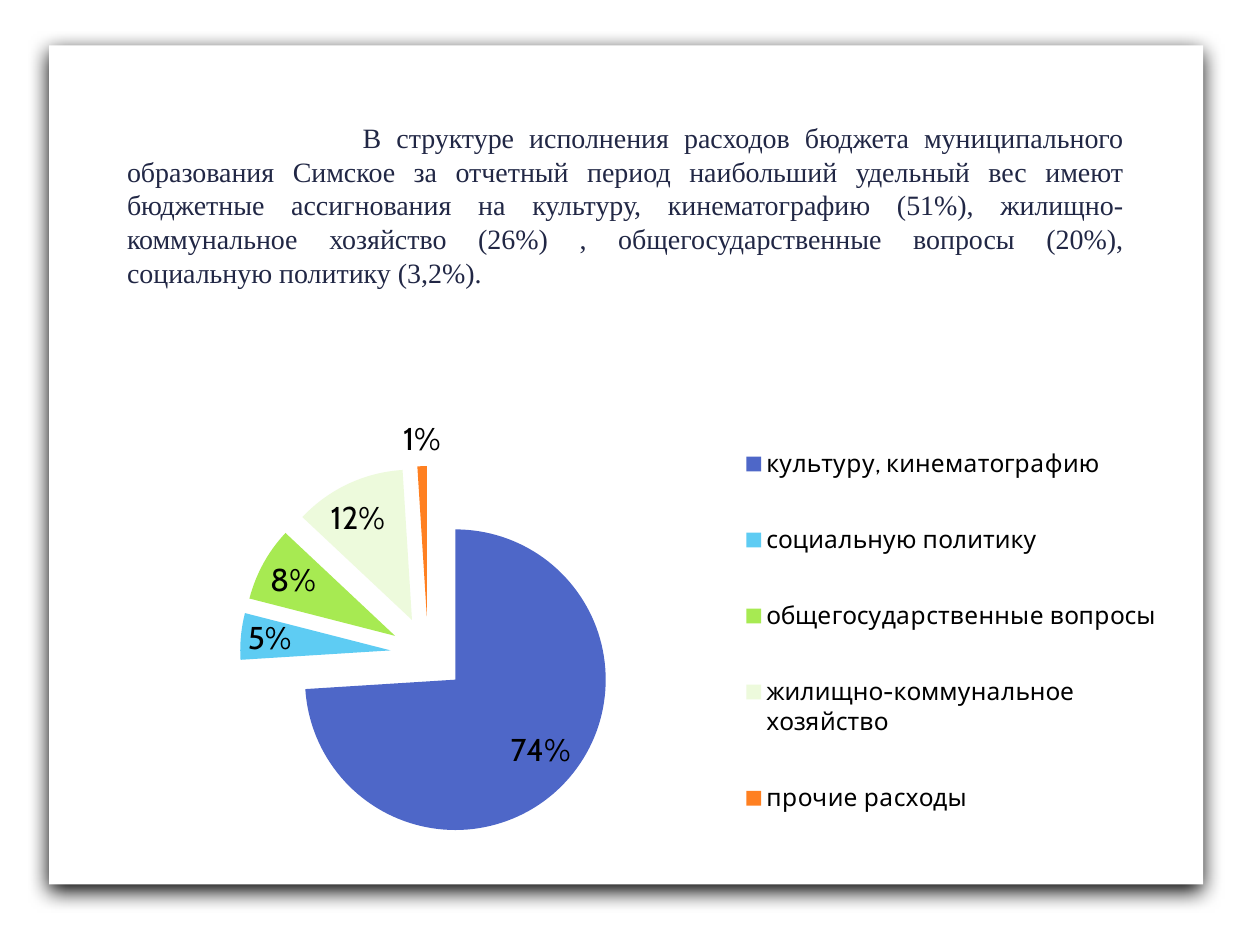
from dataclasses import dataclass
from lxml import etree
from pptx import Presentation
from pptx import util as u
from pptx.chart import data
from pptx.dml.color import RGBColor
from pptx.enum import chart as ch, shapes, text
from pptx.oxml import ns


@dataclass(frozen=True)
class Theme:
    paper: str = "FFFFFF"
    ink: str = "212745"
    black: str = "000000"
    slices: tuple = ("4E67C8", "5ECCF3", "A7EA52", "EDFADC", "FF8021")
    serif: str = "Times New Roman"
    sans: str = "Cabin"
    body: int = 16
    label: int = 18
    key: int = 14


def style(font, face, size, color):
    font.name, font.size = face, u.Pt(size)
    font.color.rgb = RGBColor.from_string(color)


def write(frame, words, face, size, color, align, indent=0):
    frame.word_wrap = True
    frame.vertical_anchor = text.MSO_ANCHOR.TOP
    para = frame.paragraphs[0]
    para.alignment = align
    para._p.get_or_add_pPr().set("indent", str(u.Inches(indent)))
    run = para.add_run()
    run.text = words
    style(run.font, face, size, color)


class Deck:
    def __init__(self, theme):
        self.theme = theme
        self.prs = Presentation()
        self.prs.slide_width, self.prs.slide_height = u.Inches(10), u.Inches(7.5)
        self.slide = self.prs.slides.add_slide(self.prs.slide_layouts[6])

    def panel(self, *box):
        rect = self.slide.shapes.add_shape(
            shapes.MSO_SHAPE.RECTANGLE, *map(u.Inches, box))
        rect.shadow.inherit = False
        rect.fill.solid()
        rect.fill.fore_color.rgb = RGBColor.from_string(self.theme.paper)
        rect.line.fill.background()
        return rect

    def shade(self, shape, blur, dist, angle):
        effects = shape._element.spPr.find(ns.qn("a:effectLst"))
        outer = etree.SubElement(
            effects, ns.qn("a:outerShdw"), blurRad=str(u.Pt(blur)),
            dist=str(u.Pt(dist)), dir=str(angle * 60000), rotWithShape="0")
        etree.SubElement(outer, ns.qn("a:srgbClr"), val=self.theme.black)

    def place(self, legend, **area):
        node = legend._element
        for old in node.findall(ns.qn("c:layout")):
            node.remove(old)
        frame = etree.Element(ns.qn("c:layout"))
        node.find(ns.qn("c:legendPos")).addnext(frame)
        manual = etree.SubElement(frame, ns.qn("c:manualLayout"))
        for axis in "xy":
            etree.SubElement(manual, ns.qn(f"c:{axis}Mode"), val="edge")
        for side in "xywh":
            etree.SubElement(manual, ns.qn(f"c:{side}"), val=str(area[side]))

    def pie(self, box, shares, burst):
        t = self.theme
        source = data.CategoryChartData()
        source.categories = list(shares)
        source.add_series("Series 1", list(shares.values()))
        chart = self.slide.shapes.add_chart(
            ch.XL_CHART_TYPE.PIE, *map(u.Inches, box), source).chart
        chart.has_title = False
        style(chart.font, t.sans, t.label, t.black)
        chart.has_legend = True
        chart.legend.position = ch.XL_LEGEND_POSITION.RIGHT
        chart.legend.include_in_layout = False
        style(chart.legend.font, t.sans, t.key, t.black)
        self.place(chart.legend, x=0.6, y=0, w=0.4, h=1)
        plot = chart.plots[0]
        plot.vary_by_categories = True
        series = plot.series[0]
        for i, color in enumerate(t.slices):
            fill = series.points[i].format.fill
            fill.solid()
            fill.fore_color.rgb = RGBColor.from_string(color)
        for point in series._element.findall(ns.qn("c:dPt")):
            gap = etree.Element(ns.qn("c:explosion"), val=str(burst))
            point.find(ns.qn("c:spPr")).addprevious(gap)
        labels = series.data_labels
        labels.show_percentage, labels.show_value = True, False
        labels.number_format, labels.number_format_is_linked = "0%", False
        labels.position = ch.XL_LABEL_POSITION.BEST_FIT
        style(labels.font, t.sans, t.label, t.black)


def main():
    theme = Theme()
    deck = Deck(theme)
    deck.shade(deck.panel(0.39, 0.36, 9.16, 6.66), blur=12, dist=4, angle=90)
    note = deck.panel(0.91, 0.91, 8.11, 1.68)
    write(
        note.text_frame,
        "В структуре исполнения расходов бюджета муниципального образования "
        "Симское за отчетный период наибольший удельный вес имеют бюджетные "
        "ассигнования на культуру, кинематографию (51%), жилищно-коммунальное "
        "хозяйство (26%) , общегосударственные вопросы (20%), социальную "
        "политику (3,2%).",
        face=theme.serif, size=theme.body, color=theme.ink,
        align=text.PP_ALIGN.JUSTIFY, indent=1.87)
    deck.pie((0.56, 3.2, 8.74, 3.62), {
        "культуру, кинематографию": 74,
        "социальную политику": 5,
        "общегосударственные вопросы": 8,
        "жилищно-коммунальное хозяйство": 12,
        "прочие расходы": 1,
    }, burst=25)
    deck.prs.save("out.pptx")


if __name__ == "__main__":
    main()
